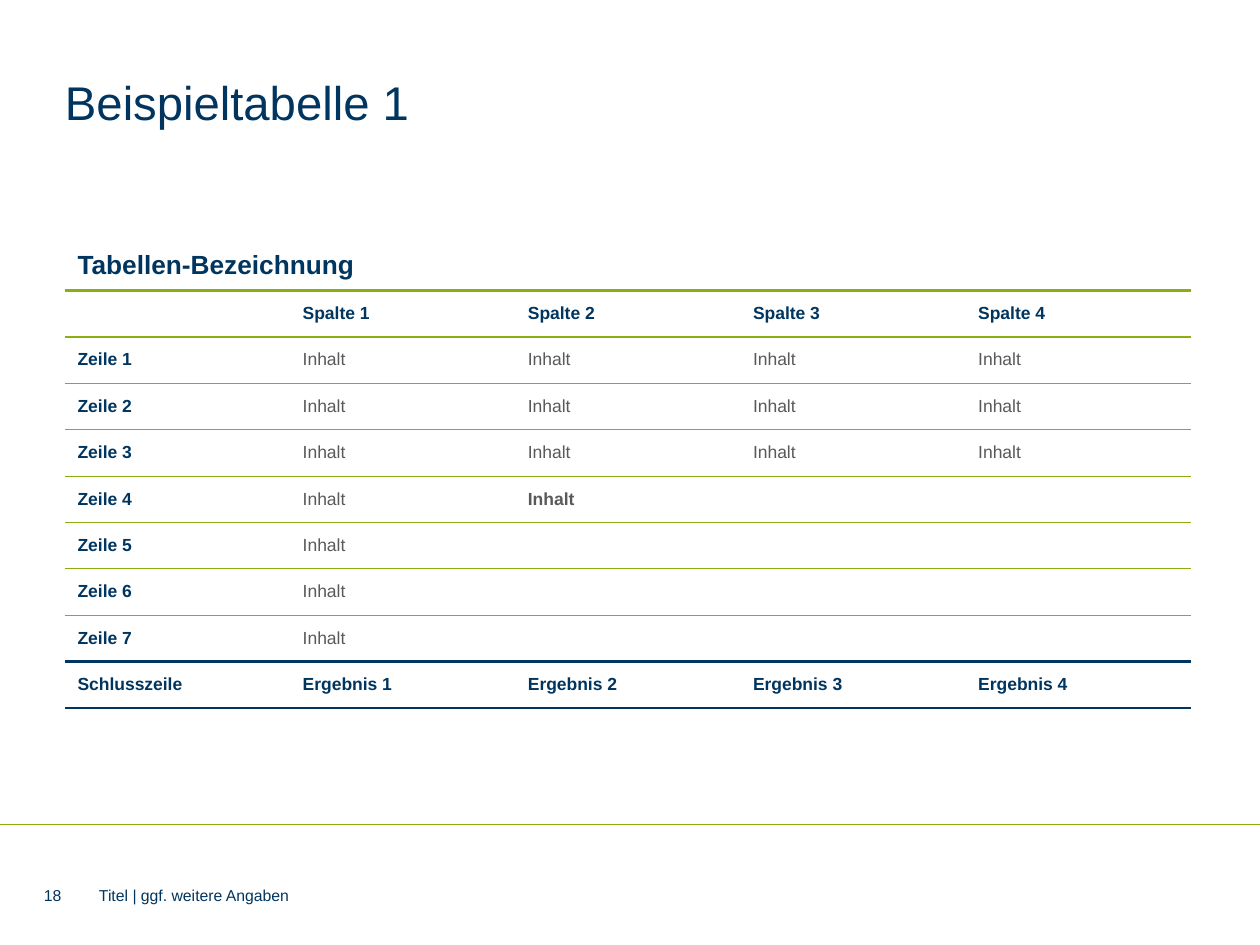
from dataclasses import dataclass
from lxml import etree
from pptx import Presentation
from pptx.dml.color import RGBColor
from pptx.enum.shapes import MSO_CONNECTOR
from pptx.enum.text import MSO_ANCHOR, MSO_AUTO_SIZE, PP_ALIGN
from pptx.oxml.ns import qn
from pptx.util import Emu, Pt

TOP, MIDDLE = MSO_ANCHOR.TOP, MSO_ANCHOR.MIDDLE
START = PP_ALIGN.LEFT
FIXED = MSO_AUTO_SIZE.NONE
STRAIGHT = MSO_CONNECTOR.STRAIGHT


@dataclass(frozen=True)
class Theme:
    font: str = "Arial"
    blue: str = "003560"
    green: str = "8DAE10"
    gray: str = "595959"
    title: int = 27
    head: int = 15
    body: int = 10
    foot: int = 9
    thin: float = 0.5
    thick: float = 1.5


T = Theme()
TITLE = "Beispieltabelle 1"
ROWS = [
    ["Tabellen-Bezeichnung"],
    ["", "Spalte 1", "Spalte 2", "Spalte 3", "Spalte 4"],
    ["Zeile 1"] + ["Inhalt"] * 4,
    ["Zeile 2"] + ["Inhalt"] * 4,
    ["Zeile 3"] + ["Inhalt"] * 4,
    ["Zeile 4"] + ["Inhalt"] * 2,
    ["Zeile 5", "Inhalt"],
    ["Zeile 6", "Inhalt"],
    ["Zeile 7", "Inhalt"],
    ["Schlusszeile", "Ergebnis 1", "Ergebnis 2", "Ergebnis 3", "Ergebnis 4"],
]
STRONG = {(5, 2)}
FOOT = [("Titel | ggf. weitere Angaben", 99, 868), ("18", 44, 36)]
WIDE, HIGH = 1260, 945
LEFT, UPPER, SPAN, DEPTH = 65, 244, 1126, 464
COLS = 5
LAST = len(ROWS) - 1
RULES = [None] + [(T.green, T.thick)] * 2 + [(T.green, T.thin)] * 6
RULES += [(T.blue, T.thick)] * 2


def px(n):
    return Emu(round(n * 914400 / 126))


def place(shape, x, y, w, h):
    shape.left, shape.top, shape.width, shape.height = map(px, (x, y, w, h))


def style(par, size, color=T.blue, bold=False):
    for run in par.runs:
        font = run.font
        font.name, font.size, font.bold = T.font, Pt(size), bold
        font.color.rgb = RGBColor.from_string(color)


def fit(frame, anchor):
    frame.margin_left = frame.margin_right = 0
    frame.margin_top = frame.margin_bottom = 0
    frame.auto_size = FIXED
    frame.word_wrap = True
    frame.vertical_anchor = anchor


def edge(cell, side, rule):
    props = cell._tc.get_or_add_tcPr()
    line = etree.SubElement(props, qn(f"a:ln{side}"))
    if rule is None:
        etree.SubElement(line, qn("a:noFill"))
        return
    color, width = rule
    line.set("w", str(Pt(width)))
    fill = etree.SubElement(line, qn("a:solidFill"))
    etree.SubElement(fill, qn("a:srgbClr"), val=color)


def add_title(slide):
    title = slide.shapes.title
    place(title, LEFT, 73, 1042, 86)
    frame = title.text_frame
    frame.text = TITLE
    fit(frame, TOP)
    par = frame.paragraphs[0]
    par.alignment = START
    par.line_spacing = 1.0
    style(par, T.title)


def add_foot(slide):
    rule = slide.shapes.add_connector(STRAIGHT, 0, px(824), px(WIDE), px(824))
    rule.line.color.rgb = RGBColor.from_string(T.green)
    rule.line.width = Pt(T.thin)
    etree.SubElement(rule._element.spPr, qn("a:effectLst"))
    for text, x, w in FOOT:
        box = slide.shapes.add_textbox(px(x), px(885), px(w), px(20))
        frame = box.text_frame
        frame.text = text
        fit(frame, MIDDLE)
        style(frame.paragraphs[0], T.foot)


def add_grid(slide):
    area = map(px, (LEFT, UPPER, SPAN, DEPTH))
    table = slide.shapes.add_table(len(ROWS), COLS, *area).table
    table.first_row = table.horz_banding = False
    for col in table.columns:
        col.width = px(SPAN / COLS)
    for r, row in enumerate(ROWS):
        table.rows[r].height = px(DEPTH / len(ROWS))
        for c in range(COLS):
            cell = table.cell(r, c)
            text = row[c] if c < len(row) else ""
            cell.text = text
            cell.vertical_anchor = MIDDLE if r else TOP
            par = cell.text_frame.paragraphs[0]
            if text:
                inner = c > 0 and 1 < r < LAST
                color = T.gray if inner else T.blue
                bold = not inner or (r, c) in STRONG
                style(par, T.body if r else T.head, color, bold)
            else:
                size = str(T.body * 100)
                etree.SubElement(par._p, qn("a:endParaRPr"), sz=size)
            for side, rule in zip("LRTB", (None, None, RULES[r], RULES[r + 1])):
                edge(cell, side, rule)
            cell.fill.background()
    table.cell(0, 0).merge(table.cell(0, COLS - 1))


def main():
    deck = Presentation()
    deck.slide_width, deck.slide_height = px(WIDE), px(HIGH)
    slide = deck.slides.add_slide(deck.slide_layouts[5])
    add_foot(slide)
    add_title(slide)
    add_grid(slide)
    deck.save("out.pptx")


if __name__ == "__main__":
    main()
